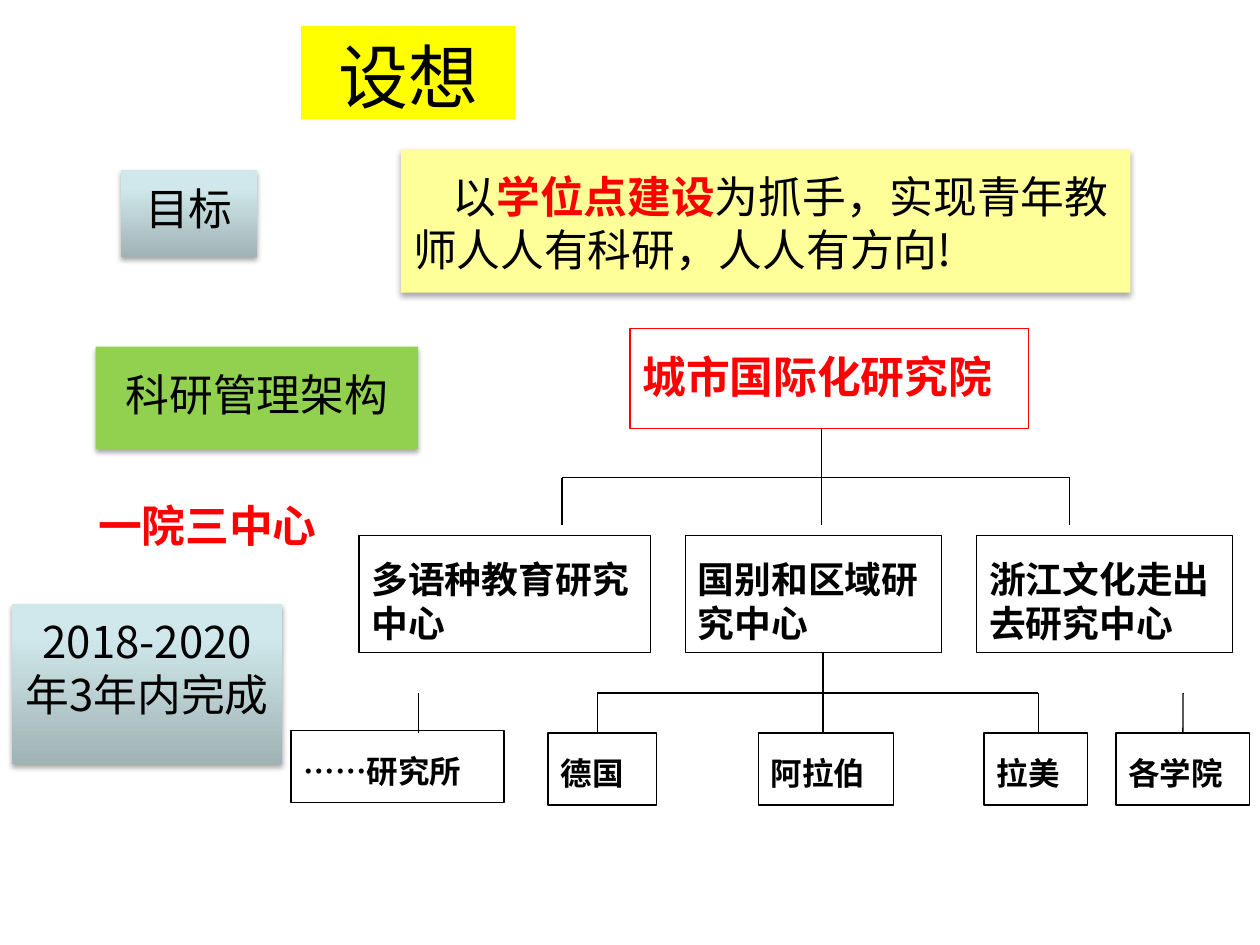
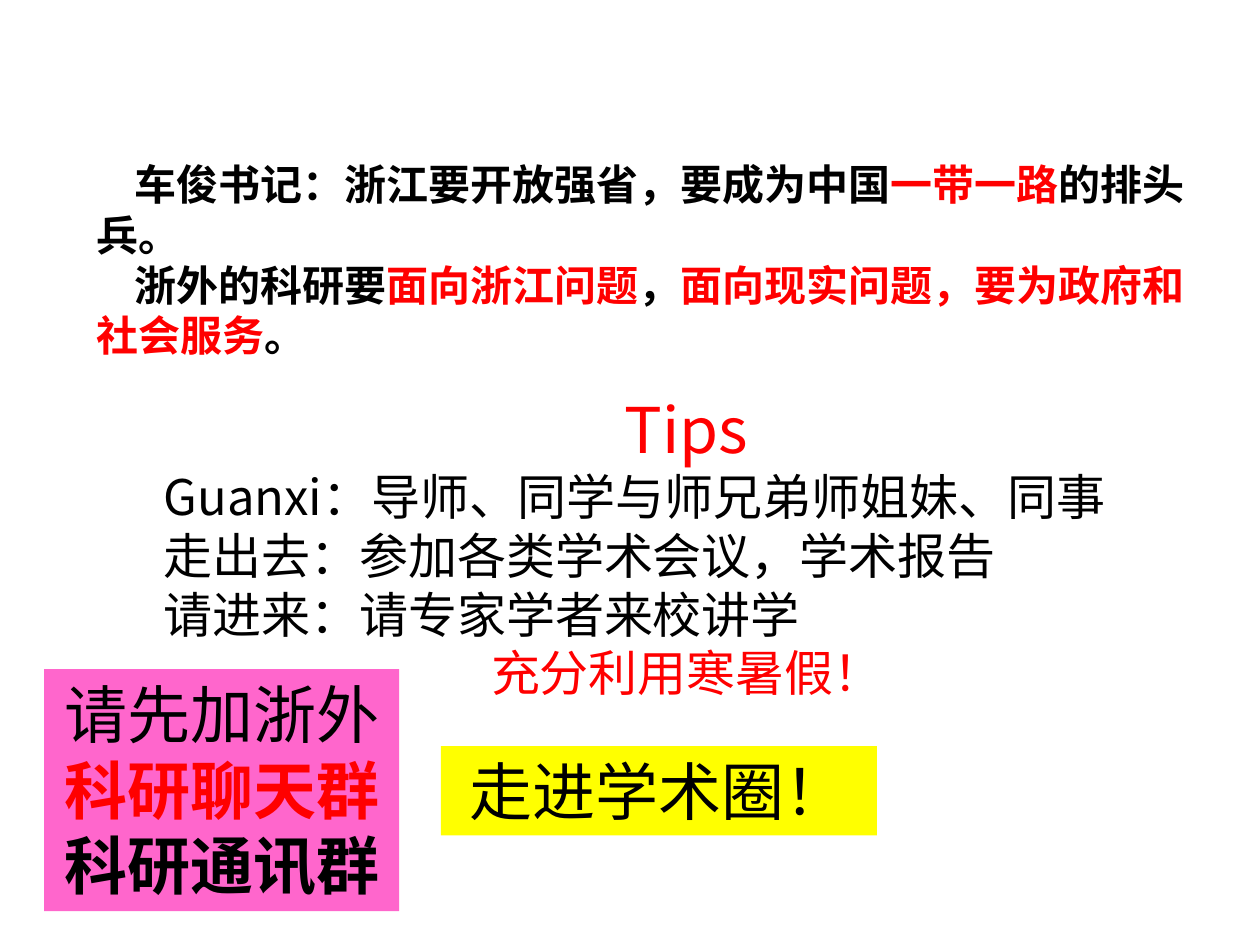
from lxml.etree import SubElement
from pptx import Presentation
from pptx.dml.color import RGBColor
from pptx.enum.shapes import MSO_CONNECTOR, MSO_SHAPE
from pptx.enum.text import MSO_ANCHOR, PP_ALIGN
from pptx.oxml.ns import qn
from pptx.util import Cm, Pt

# Shared look
FONT = "Noto Sans CJK SC"
BLACK, RED, YELLOW = "000000", "FF0000", "FFFF00"
PALE_YELLOW, GREEN, PINK = "FFFF99", "92D050", "FF66CC"
STEEL = ("A0B3B5", "D0E8EB")  # gradient from bottom to top
PLAIN_INSETS = (0.25, 0.13, 0.25, 0.13)
DEEP_INSETS = (0.25, 0.43, 0.25, 0.13)
STEEL_INSETS = (0.25, 0.23, 0.25, 0.08)


def color(hex_string):
    return RGBColor.from_string(hex_string)


def add_run(p, text, size=25, color_hex=BLACK, bold=False, font=FONT):
    r = p.add_run()
    r.text = text
    r.font.size, r.font.bold, r.font.name = Pt(size), bold, font
    r.font.color.rgb = color(color_hex)
    SubElement(r.font._element, qn("a:ea")).set("typeface", FONT)


def set_text(tf, paragraphs, align=PP_ALIGN.LEFT, insets=DEEP_INSETS,
             first_indent=0, **run_format):
    """Each paragraph is a string or a list of strings and (string, format) pairs."""
    tf.word_wrap = True
    tf.vertical_anchor = MSO_ANCHOR.TOP
    (tf.margin_left, tf.margin_top,
     tf.margin_right, tf.margin_bottom) = map(Cm, insets)
    for i, runs in enumerate(paragraphs):
        p = tf.add_paragraph() if i else tf.paragraphs[0]
        p.alignment = align
        if first_indent:
            p._p.get_or_add_pPr().set("indent", str(Cm(first_indent)))
        for run in [runs] if isinstance(runs, str) else runs:
            text, extra = (run, {}) if isinstance(run, str) else run
            add_run(p, text, **{**run_format, **extra})


def add_shadow(sp):
    shadow = SubElement(sp._element.spPr.find(qn("a:effectLst")), qn("a:outerShdw"),
                        blurRad=str(Pt(3.1)), dist=str(Pt(1.8)),
                        dir="5400000", rotWithShape="0")
    black = SubElement(shadow, qn("a:srgbClr"), val=BLACK)
    SubElement(black, qn("a:alpha"), val="35000")


def add_box(s, at, paragraphs, fill=None, line=None, shadow=False, **text_format):
    sp = s.shapes.add_shape(MSO_SHAPE.RECTANGLE, *map(Cm, at))
    sp.shadow.inherit = False
    if isinstance(fill, tuple):
        sp.fill.gradient()
        sp.fill.gradient_angle = 90
        for stop, hex_string, position in zip(sp.fill.gradient_stops, fill, (0, 0.8)):
            stop.color.rgb, stop.position = color(hex_string), position
    elif fill:
        sp.fill.solid()
        sp.fill.fore_color.rgb = color(fill)
    else:
        sp.fill.background()
    if line:
        sp.line.color.rgb, sp.line.width = color(line), Pt(0.75)
    else:
        sp.line.fill.background()
    if shadow:
        add_shadow(sp)
    set_text(sp.text_frame, paragraphs, **text_format)
    return sp


def add_label(s, at, paragraphs, **text_format):
    tf = s.shapes.add_textbox(*map(Cm, at)).text_frame
    set_text(tf, paragraphs, **text_format)
    return tf


def add_line(s, x1, y1, x2, y2):
    cxn = s.shapes.add_connector(MSO_CONNECTOR.STRAIGHT, *map(Cm, (x1, y1, x2, y2)))
    cxn.line.color.rgb, cxn.line.width = color(BLACK), Pt(0.75)
    SubElement(cxn._element.spPr, qn("a:effectLst"))
    return cxn


def add_branch(s, stem_x, top, bar_y, bottom, drop_xs):
    add_line(s, stem_x, top, stem_x, bar_y)
    add_line(s, drop_xs[0], bar_y, drop_xs[-1], bar_y)
    for x in drop_xs:
        add_line(s, x, bar_y, x, bottom)


def build_plan(s):
    # Title and goal
    add_box(s, (6.07, 0.53, 4.32, 1.88), ["设想"], fill=YELLOW, size=40, font="Arial",
            align=PP_ALIGN.CENTER, insets=(0.28, 0.15, 0.28, 0.15))
    steel = dict(fill=STEEL, shadow=True, align=PP_ALIGN.CENTER, insets=STEEL_INSETS)
    add_box(s, (2.44, 3.43, 2.74, 1.75), ["目标"], **steel)
    add_box(s, (8.08, 3, 14.71, 2.9),
            [["以", ("学位点建设", dict(color_hex=RED, bold=True)),
              "为抓手，实现青年教师人人有科研，人人有方向!"]],
            fill=PALE_YELLOW, shadow=True, first_indent=0.8)

    # Structure and deadline
    add_box(s, (1.93, 6.99, 6.5, 2.06), ["科研管理架构"], fill=GREEN, shadow=True,
            align=PP_ALIGN.CENTER)
    add_label(s, (1.73, 9.63, 5.74, 2.01), ["一院三中心"], color_hex=RED, bold=True)
    add_box(s, (0.25, 12.17, 5.44, 3.23), ["2018-2020年3年内完成"], **steel)

    # Institute, centres and units
    add_box(s, (12.7, 6.63, 8.03, 2.01), ["城市国际化研究院"], line=RED,
            color_hex=RED, bold=True)
    for x, width, name in [(7.24, 5.87, "多语种教育研究中心"),
                           (13.82, 5.16, "国别和区域研究中心"),
                           (19.69, 5.16, "浙江文化走出去研究中心")]:
        add_box(s, (x, 10.8, width, 2.36), [name], line=BLACK, size=21, bold=True)
    units = {}
    for x, y, width, name in [(5.87, 14.73, 4.29, "……研究所"),
                              (11.05, 14.78, 2.18, "德国"),
                              (15.29, 14.78, 2.72, "阿拉伯"),
                              (19.84, 14.78, 2.08, "拉美"),
                              (22.5, 14.78, 2.69, "各学院")]:
        units[name] = add_box(s, (x, y, width, 1.45), [name], line=BLACK,
                              size=18, bold=True)

    # Lines of the tree
    add_branch(s, 16.56, 8.64, 9.63, 10.59, (11.33, 16.56, 21.56))
    add_branch(s, 16.59, 13.16, 13.97, 14.76, (12.04, 16.59, 20.93))
    add_line(s, 8.43, 13.97, 8.43, 14.78)
    add_line(s, 23.85, 13.97, 23.85, 14.78).end_connect(units["各学院"], 0)


def build_tips(s):
    red = dict(color_hex=RED)

    # Policy
    add_label(s, (1.7, 3.07, 22.96, 4.37),
              [["车俊书记：浙江要开放强省，要成为中国", ("一带一路", red), "的排头兵。"],
               ["浙外的科研要", ("面向浙江问题", red), "，",
                ("面向现实问题，要为政府和社会服务", red), "。"]],
              size=24, bold=True, first_indent=0.77, insets=PLAIN_INSETS)

    # Tips
    tf = add_label(s, (3.05, 7.75, 21.59, 6.76),
                   [[("Tips", dict(size=36, **red))],
                    "Guanxi：导师、同学与师兄弟师姐妹、同事",
                    "走出去：参加各类学术会议，学术报告",
                    "请进来：请专家学者来校讲学",
                    [("充分利用寒暑假！", red)]],
                   size=28, insets=PLAIN_INSETS)
    for p in (tf.paragraphs[0], tf.paragraphs[-1]):
        p.alignment = PP_ALIGN.CENTER

    # Calls to action
    call = dict(size=36, align=PP_ALIGN.CENTER, insets=PLAIN_INSETS)
    add_box(s, (8.89, 15.04, 8.79, 1.8), ["走进学术圈！"], fill=YELLOW, **call)
    add_box(s, (0.89, 13.49, 7.16, 4.88),
            [["请先加浙外", ("科研聊天群", dict(bold=True, **red))],
             [("科研通讯群", dict(bold=True))]], fill=PINK, **call)


def main():
    prs = Presentation()
    prs.slide_width, prs.slide_height = Cm(25.4), Cm(19.05)
    for build in (build_plan, build_tips):
        build(prs.slides.add_slide(prs.slide_layouts[6]))
    prs.save("out.pptx")


if __name__ == "__main__":
    main()
